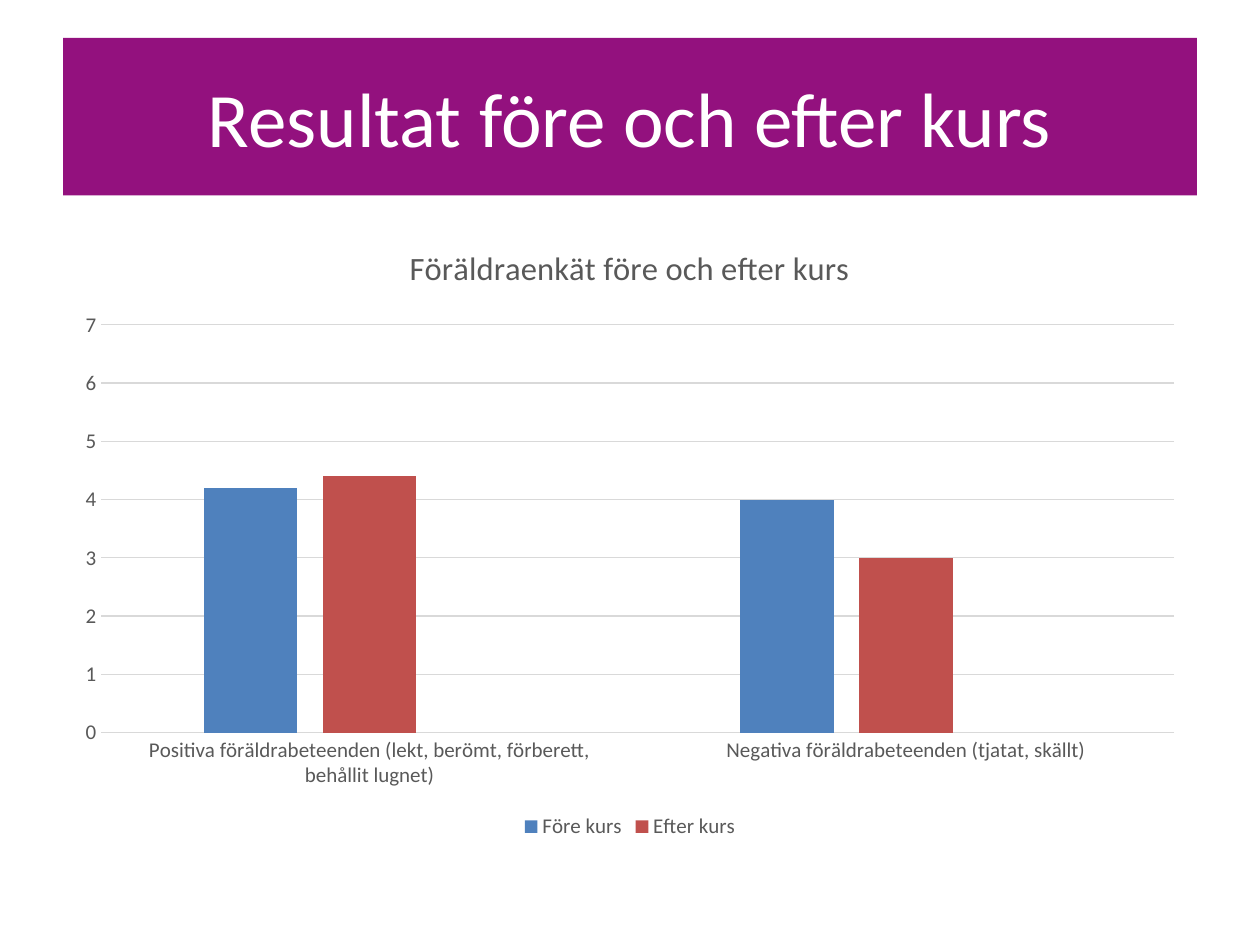
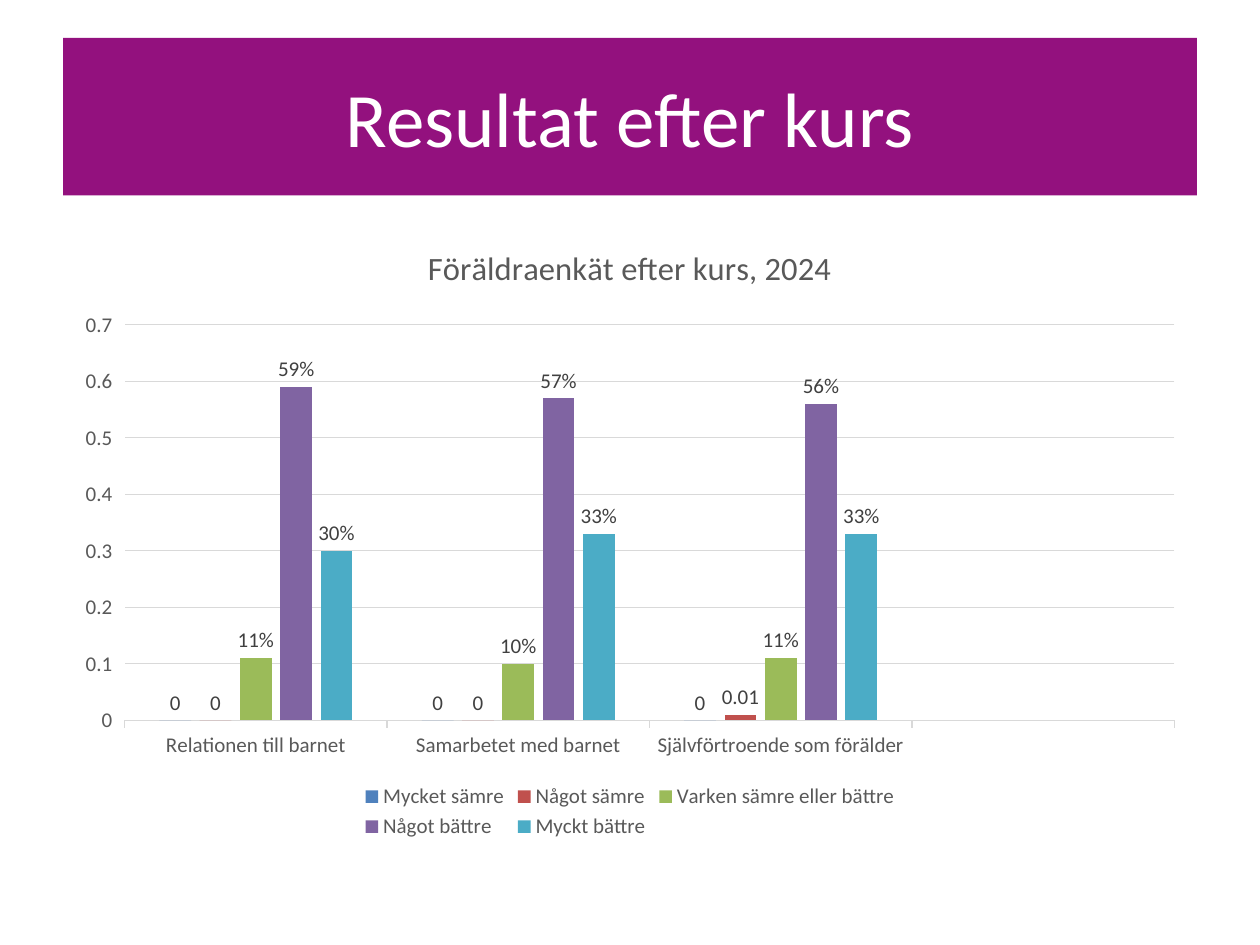
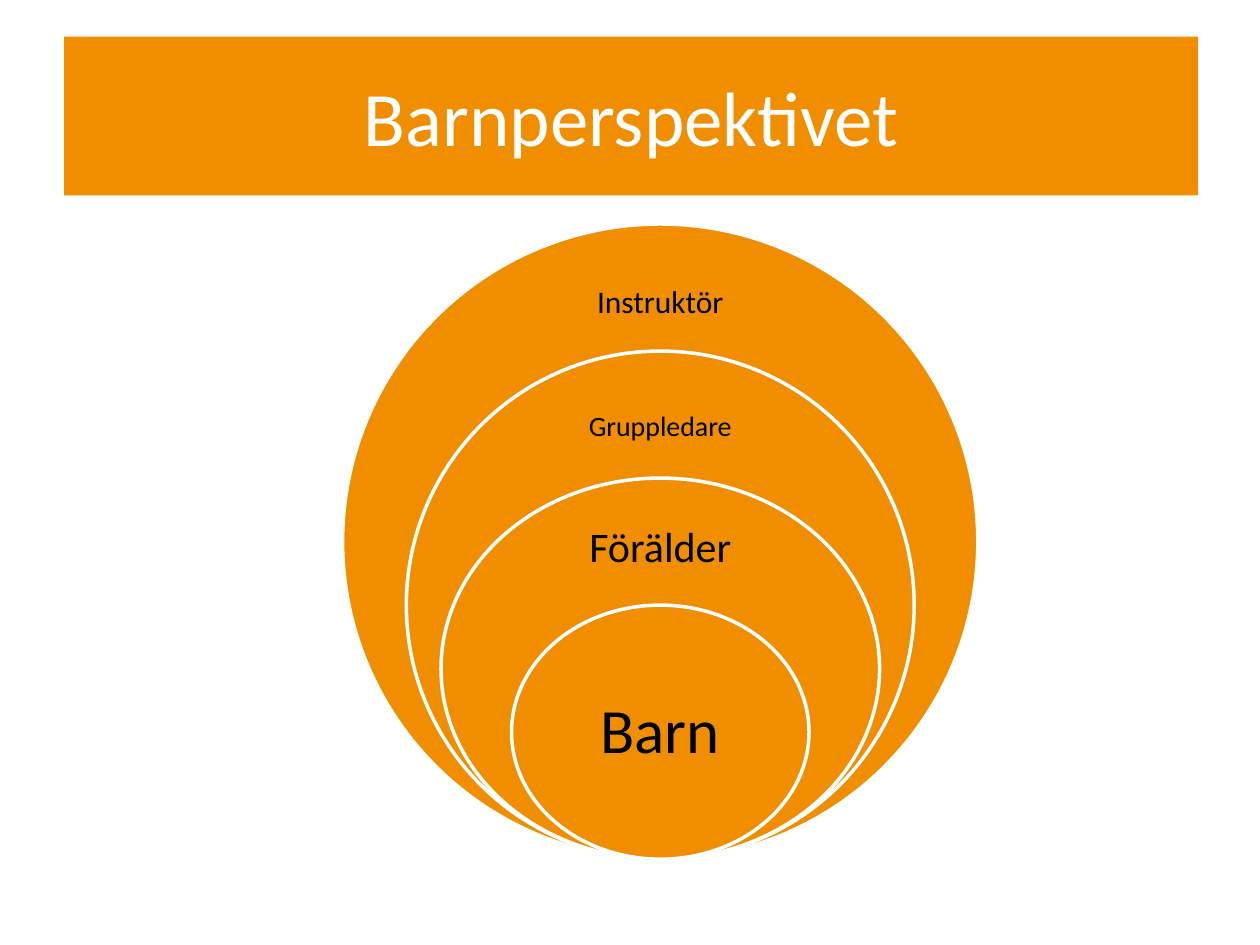
import pptx
import pptx.chart.data
import pptx.dml.color
import pptx.enum.chart
import pptx.enum.shapes
import pptx.enum.text
import pptx.oxml
import pptx.util

Pt = pptx.util.Pt
RGBColor = pptx.dml.color.RGBColor
TickMark = pptx.enum.chart.XL_TICK_MARK
Middle = pptx.enum.text.MSO_ANCHOR.MIDDLE
Center = pptx.enum.text.PP_ALIGN.CENTER

FONT = "Calibri"
PURPLE = RGBColor(0x93, 0x11, 0x7E)
ORANGE = RGBColor(0xF1, 0x8E, 0x00)
WHITE = RGBColor(0xFF, 0xFF, 0xFF)
BLACK = RGBColor(0x00, 0x00, 0x00)
DARK_GREY = RGBColor(0x40, 0x40, 0x40)
GREY = RGBColor(0x59, 0x59, 0x59)
LIGHT_GREY = RGBColor(0xD9, 0xD9, 0xD9)
SERIES_COLORS = [
    RGBColor(0x4F, 0x81, 0xBD),
    RGBColor(0xC0, 0x50, 0x4D),
    RGBColor(0x9B, 0xBB, 0x59),
    RGBColor(0x80, 0x64, 0xA2),
    RGBColor(0x4B, 0xAC, 0xC6),
]


class Deck:
    def __init__(self):
        self.prs = pptx.Presentation()
        self.prs.slide_width, self.prs.slide_height = Pt(720), Pt(540)
        self.s = None

    def style_font(self, font, size, color):
        font.name, font.size, font.bold = FONT, Pt(size), False
        font.color.rgb = color

    def fill_text(self, tf, text, size, color):
        tf.text = text
        tf.word_wrap = True
        tf.vertical_anchor = Middle
        p = tf.paragraphs[0]
        p.alignment = Center
        self.style_font(p.runs[0].font, size, color)

    def add_slide(self, title, band_color, left=36, top=21.6, height=90):
        """Start a title-only slide whose title is a coloured band."""
        self.s = self.prs.slides.add_slide(self.prs.slide_layouts[5])
        sp = self.s.shapes.title
        sp.left, sp.top, sp.width, sp.height = Pt(left), Pt(top), Pt(648), Pt(height)
        sp.fill.solid()
        sp.fill.fore_color.rgb = band_color
        self.fill_text(sp.text_frame, title, 44, WHITE)

    def add_column_chart(self, title, categories, series, tick_mark):
        data = pptx.chart.data.CategoryChartData()
        data.categories = categories
        for name, values in series:
            data.add_series(name, values)
        chart = self.s.shapes.add_chart(
            pptx.enum.chart.XL_CHART_TYPE.COLUMN_CLUSTERED,
            Pt(36), Pt(126), Pt(648), Pt(356.4), data).chart
        self.style_font(chart.font, 10, BLACK)

        chart.has_title = True
        tf = chart.chart_title.text_frame
        tf.text = title
        self.style_font(tf.paragraphs[0].runs[0].font, 18.6, GREY)
        chart.chart_title.include_in_layout = False

        chart.has_legend = True
        chart.legend.position = pptx.enum.chart.XL_LEGEND_POSITION.BOTTOM
        chart.legend.include_in_layout = False
        self.style_font(chart.legend.font, 12, GREY)

        for axis in (chart.category_axis, chart.value_axis):
            axis.major_tick_mark = tick_mark
            axis.minor_tick_mark = TickMark.NONE
            self.style_font(axis.tick_labels.font, 12, GREY)
        grid = chart.value_axis.major_gridlines.format.line
        for line in (chart.category_axis.format.line, grid):
            line.color.rgb = LIGHT_GREY
            line.width = Pt(0.75)
        chart.value_axis.format.line.fill.background()

        plot = chart.plots[0]
        plot.gap_width, plot.overlap = 219, -27
        plot.vary_by_categories = False
        for ser, color in zip(plot.series, SERIES_COLORS):
            ser.format.fill.solid()
            ser.format.fill.fore_color.rgb = color
        return chart

    def label_series(self, ser, number_format):
        labels = ser.data_labels
        labels.show_value = True
        labels.position = pptx.enum.chart.XL_LABEL_POSITION.OUTSIDE_END
        labels.number_format = number_format
        labels.number_format_is_linked = False
        self.style_font(labels.font, 12, DARK_GREY)

    def hide_legend_entry(self, chart, index):
        entry = pptx.oxml.parse_xml(
            '<c:legendEntry xmlns:c="http://schemas.openxmlformats.org/drawingml/2006/chart">'
            f'<c:idx val="{index}"/><c:delete val="1"/></c:legendEntry>')
        chart.legend._element.insert(1, entry)

    def add_ellipse(self, center_x, bottom, width, height, color):
        sp = self.s.shapes.add_shape(
            pptx.enum.shapes.MSO_SHAPE.OVAL,
            Pt(center_x - width / 2), Pt(bottom - height), Pt(width), Pt(height))
        sp.shadow.inherit = False
        sp.fill.solid()
        sp.fill.fore_color.rgb = color
        sp.line.color.rgb = WHITE
        sp.line.width = Pt(2)

    def add_label(self, text, center_x, top, width, height, size, inset):
        sp = self.s.shapes.add_textbox(
            Pt(center_x - width / 2), Pt(top), Pt(width), Pt(height))
        tf = sp.text_frame
        tf.margin_left = tf.margin_right = Pt(inset)
        tf.margin_top = tf.margin_bottom = Pt(inset)
        self.fill_text(tf, text, size, BLACK)
        tf.paragraphs[0].line_spacing = 0.9


def before_and_after(deck):
    deck.add_slide("Resultat före och efter kurs", PURPLE)
    chart = deck.add_column_chart(
        "Föräldraenkät före och efter kurs",
        ["Positiva föräldrabeteenden (lekt, berömt, förberett, behållit lugnet)",
         "Negativa föräldrabeteenden (tjatat, skällt)"],
        [("Före kurs", (4.2, 4)),
         ("Efter kurs", (4.4, 3)),
         ("Series 3", (None, None))],
        TickMark.NONE)
    chart.value_axis.maximum_scale = 7
    deck.hide_legend_entry(chart, 2)


def after(deck):
    deck.add_slide("Resultat efter kurs", PURPLE)
    chart = deck.add_column_chart(
        "Föräldraenkät efter kurs, 2024",
        ["Relationen till barnet", "Samarbetet med barnet",
         "Självförtroende som förälder", ""],
        [("Mycket sämre", (0, 0, 0, None)),
         ("Något sämre", (0, 0, 0.01, None)),
         ("Varken sämre eller bättre", (0.11, 0.1, 0.11, None)),
         ("Något bättre", (0.59, 0.57, 0.56, None)),
         ("Myckt bättre", (0.3, 0.33, 0.33, None))],
        TickMark.OUTSIDE)
    for i, ser in enumerate(chart.plots[0].series):
        deck.label_series(ser, "General" if i < 2 else "0%")


def child_perspective(deck):
    deck.add_slide("Barnperspektivet", ORANGE, left=36.7, top=20.9, height=90.7)
    center_x, bottom, outer_height = 377.3, 491, 363
    # text, ellipse width, label top, label width, label height, size, inset
    layers = [
        ("Instruktör", 363, 146.2, 101.5, 54.7, 18, 10),
        ("Gruppledare", 290.2, 218.2, 101.5, 52.6, 16, 8.6),
        ("Förälder", 250.6, 289.4, 116.6, 49, 24, 13.7),
        ("Barn", 170, 382.3, 120.2, 72.7, 36, 20),
    ]
    for i, (text, width, top, label_width, label_height, size, inset) in enumerate(layers):
        height = outer_height * (1 - 0.2 * i)
        deck.add_ellipse(center_x, bottom, width, height, ORANGE)
        deck.add_label(text, center_x, top, label_width, label_height, size, inset)


def main():
    deck = Deck()
    before_and_after(deck)
    after(deck)
    child_perspective(deck)
    deck.prs.save("out.pptx")


if __name__ == "__main__":
    main()
